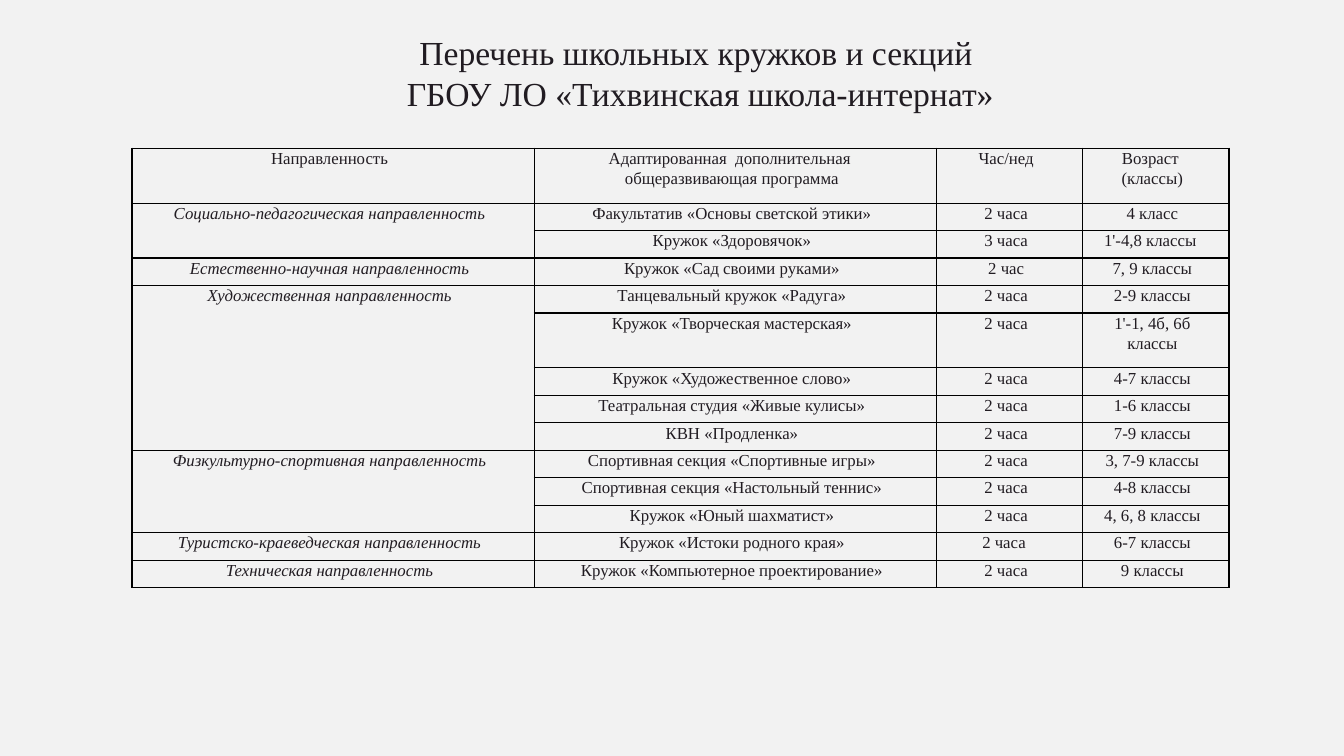
from dataclasses import dataclass

from lxml.etree import SubElement
from pptx import Presentation
from pptx.dml.color import RGBColor
from pptx.enum.text import MSO_ANCHOR, PP_ALIGN
from pptx.oxml.ns import qn
from pptx.util import Inches, Pt

COLORS = {"background": "F2F2F2", "text": "211C22", "border": "000000"}
FONT = "Times New Roman"
COLUMN_WIDTHS = (3.99, 3.99, 1.45, 1.45)
TABLE_HEIGHT = 4.36


@dataclass
class Club:
    program: str
    hours: str
    age: str
    row_units: int = 1


@dataclass
class Direction:
    name: str
    clubs: list[Club]


HEADER = Club("Адаптированная  дополнительная  общеразвивающая программа",
              "Час/нед", "Возраст \n(классы)", row_units=2)

DIRECTIONS = [
    Direction("Социально-педагогическая направленность", [
        Club("Факультатив «Основы светской этики»", "2 часа", "4 класс"),
        Club("Кружок «Здоровячок»", "3 часа", "1'-4,8 классы "),
    ]),
    Direction("Естественно-научная направленность", [
        Club("Кружок «Сад своими руками»", "2 час", "7, 9 классы"),
    ]),
    Direction("Художественная направленность", [
        Club("Танцевальный кружок «Радуга»", "2 часа", "2-9 классы"),
        Club("Кружок «Творческая мастерская»", "2 часа", "1'-1, 4б, 6б классы", row_units=2),
        Club("Кружок «Художественное слово»", "2 часа", "4-7 классы"),
        Club("Театральная студия «Живые кулисы»", "2 часа", "1-6 классы"),
        Club("КВН «Продленка»", "2 часа", "7-9 классы"),
    ]),
    Direction("Физкультурно-спортивная направленность", [
        Club("Спортивная секция «Спортивные игры»", "2 часа", "3, 7-9 классы"),
        Club("Спортивная секция «Настольный теннис»", "2 часа", "4-8 классы"),
        Club("Кружок «Юный шахматист»", "2 часа", "4, 6, 8 классы"),
    ]),
    Direction("Туристско-краеведческая направленность", [
        Club("Кружок «Истоки родного края»", "2 часа ", "6-7 классы"),
    ]),
    Direction("Техническая направленность", [
        Club("Кружок «Компьютерное проектирование»", "2 часа", "9 классы"),
    ]),
]


def format_text(text_frame, size: float, spacing: float, italic: bool = False) -> None:
    for paragraph in text_frame.paragraphs:
        paragraph.alignment = PP_ALIGN.CENTER
        paragraph.line_spacing = spacing
        paragraph.font.name = FONT
        paragraph.font.size = Pt(size)
        paragraph.font.italic = italic
        paragraph.font.color.rgb = RGBColor.from_string(COLORS["text"])


def add_borders(cell) -> None:
    properties = cell._tc.get_or_add_tcPr()
    for side in ("a:lnL", "a:lnR", "a:lnT", "a:lnB"):
        line = SubElement(properties, qn(side), w=str(Pt(1)))
        fill = SubElement(line, qn("a:solidFill"))
        SubElement(fill, qn("a:srgbClr"), val=COLORS["border"])


def fill_cell(cell, text: str, italic: bool = False) -> None:
    cell.text = text
    cell.margin_left = Inches(0.07)
    cell.margin_right = Inches(0.14)
    cell.margin_top = cell.margin_bottom = 0
    add_borders(cell)
    cell.fill.background()
    format_text(cell.text_frame, 12, 1.07, italic)


def add_title(slide) -> None:
    title = slide.shapes.add_textbox(Inches(1.31), Inches(0.3), Inches(11.27), Inches(1.16))
    frame = title.text_frame
    frame.word_wrap = True
    frame.vertical_anchor = MSO_ANCHOR.TOP
    frame.margin_top = frame.margin_bottom = 0
    frame.text = "Перечень школьных кружков и секций \vГБОУ ЛО «Тихвинская школа-интернат»"
    format_text(frame, 24, 1.03)


def add_club_table(slide) -> None:
    rows = [("Направленность", HEADER)]
    for direction in DIRECTIONS:
        for index, club in enumerate(direction.clubs):
            rows.append(("" if index else direction.name, club))

    frame = slide.shapes.add_table(len(rows), len(COLUMN_WIDTHS), Inches(1.31), Inches(1.47),
                                   Inches(sum(COLUMN_WIDTHS)), Inches(TABLE_HEIGHT))
    table = frame.table
    table.first_row = False
    table.horz_banding = False
    for column, width in zip(table.columns, COLUMN_WIDTHS):
        column.width = Inches(width)

    # Cell texts, with row heights in equal units
    unit = TABLE_HEIGHT / sum(club.row_units for _, club in rows)
    for row_index, (name, club) in enumerate(rows):
        table.rows[row_index].height = Inches(unit * club.row_units)
        for column_index, text in enumerate((name, club.program, club.hours, club.age)):
            italic = row_index > 0 and column_index == 0
            fill_cell(table.cell(row_index, column_index), text, italic)

    # One direction cell beside all of its clubs
    first = 1
    for direction in DIRECTIONS:
        last = first + len(direction.clubs) - 1
        if last > first:
            table.cell(first, 0).merge(table.cell(last, 0))
        first = last + 1


def main() -> None:
    presentation = Presentation()
    presentation.slide_width = Inches(13.33)
    presentation.slide_height = Inches(7.5)
    slide = presentation.slides.add_slide(presentation.slide_layouts[6])
    slide.background.fill.solid()
    slide.background.fill.fore_color.rgb = RGBColor.from_string(COLORS["background"])
    add_title(slide)
    add_club_table(slide)
    presentation.save("out.pptx")


if __name__ == "__main__":
    main()
